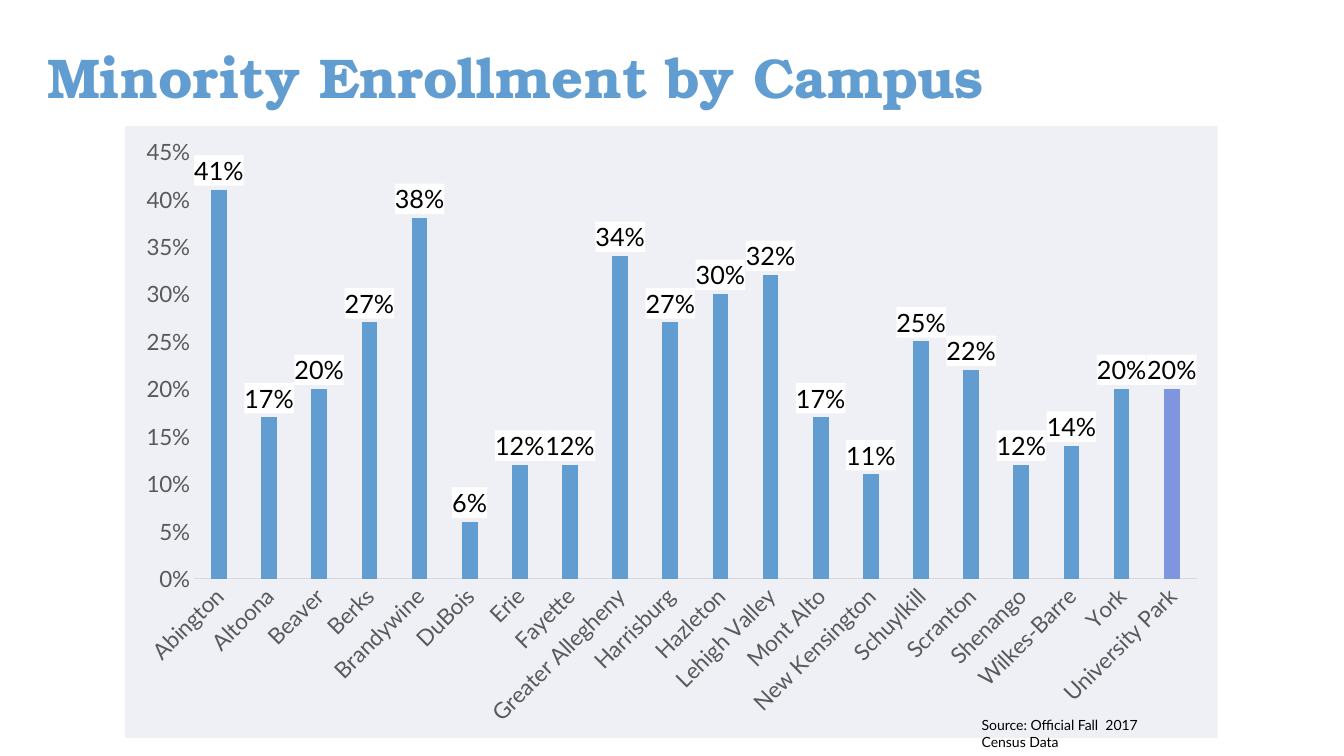
"""Build the slide showing minority enrollment by campus as a column chart."""
from lxml import etree
from pptx import Presentation
from pptx.chart.data import CategoryChartData
from pptx.dml.color import RGBColor
from pptx.enum import chart as ch, text
from pptx.oxml import parse_xml
from pptx.oxml.ns import nsdecls, qn
from pptx.util import Pt

BLUE = RGBColor(0x62, 0x9D, 0xD1)
VIOLET = RGBColor(0x7F, 0x95, 0xDE)
PALE = RGBColor(0xEE, 0xF0, 0xF6)
GRAY = RGBColor(0x59, 0x59, 0x59)
RULE = RGBColor(0xD9, 0xD9, 0xD9)
WHITE = RGBColor(0xFF, 0xFF, 0xFF)
BLACK = RGBColor(0, 0, 0)

ENROLLMENT = {
    "Abington": 0.41, "Altoona": 0.17, "Beaver": 0.2, "Berks": 0.27,
    "Brandywine": 0.38, "DuBois": 0.06, "Erie": 0.12, "Fayette": 0.12,
    "Greater Allegheny": 0.34, "Harrisburg": 0.27, "Hazleton": 0.3,
    "Lehigh Valley": 0.32, "Mont Alto": 0.17, "New Kensington": 0.11,
    "Schuylkill": 0.25, "Scranton": 0.22, "Shenango": 0.12,
    "Wilkes-Barre": 0.14, "York": 0.2, "University Park": 0.2,
}


def set_font(font, name, size, color):
    font.name, font.size = name, Pt(size)
    font.color.rgb = color


def solid_box(color):
    return parse_xml(
        f'<c:spPr {nsdecls("c", "a")}><a:solidFill><a:srgbClr val="{color}"/>'
        '</a:solidFill><a:ln><a:noFill/></a:ln></c:spPr>')


prs = Presentation()
prs.slide_width, prs.slide_height = Pt(960), Pt(540)
s = prs.slides.add_slide(prs.slide_layouts[5])

title = s.shapes.title
title.left, title.top, title.width, title.height = Pt(26.64), Pt(26.64), Pt(905.76), Pt(90)
tf = title.text_frame
tf.text = "Minority Enrollment by Campus"
tf.vertical_anchor = text.MSO_ANCHOR.TOP
tf.auto_size = text.MSO_AUTO_SIZE.NONE
p = tf.paragraphs[0]
p.alignment = text.PP_ALIGN.LEFT
p.font.bold = True
set_font(p.font, "TeX Gyre Bonum", 40, BLUE)

data = CategoryChartData(number_format="0%")
data.categories = list(ENROLLMENT)
data.add_series("Minority enrollment", list(ENROLLMENT.values()))
chart = s.shapes.add_chart(ch.XL_CHART_TYPE.COLUMN_CLUSTERED, Pt(89.28), Pt(90),
                           Pt(780.48), Pt(437.04), data).chart
chart.has_legend = False
chart.has_title = False
set_font(chart.font, "Lato", 10, BLACK)
chart_space = chart.element
chart_space.find(qn("c:chart")).addnext(solid_box(PALE))

plot_area = chart_space.find(".//" + qn("c:plotArea"))
layout = plot_area.find(qn("c:layout"))
if layout is None:
    layout = etree.Element(qn("c:layout"))
    plot_area.insert(0, layout)
manual = etree.SubElement(layout, qn("c:manualLayout"))
for tag, val in (("layoutTarget", "inner"), ("xMode", "edge"), ("yMode", "edge"),
                 ("x", "0.063"), ("y", "0.042"), ("w", "0.918"), ("h", "0.698")):
    etree.SubElement(manual, qn("c:" + tag)).set("val", val)

for axis in (chart.category_axis, chart.value_axis):
    axis.has_major_gridlines = False
    axis.major_tick_mark = axis.minor_tick_mark = ch.XL_TICK_MARK.NONE
    set_font(axis.tick_labels.font, "Lato", 16, GRAY)

campuses, share = chart.category_axis, chart.value_axis
campuses.format.line.color.rgb = RULE
campuses.format.line.width = Pt(0.75)
campuses._element.find(".//" + qn("a:bodyPr")).set("rot", "-2700000")
share.format.line.fill.background()
share.minimum_scale, share.maximum_scale, share.major_unit = 0, 0.45, 0.05
share.tick_labels.number_format = "0%"
share.tick_labels.number_format_is_linked = False

plot = chart.plots[0]
plot.gap_width, plot.overlap = 219, -27
plot.vary_by_categories = False
columns = plot.series[0]
columns.format.fill.solid()
columns.format.fill.fore_color.rgb = BLUE
university_park = columns.points[len(ENROLLMENT) - 1].format.fill
university_park.solid()
university_park.fore_color.rgb = VIOLET

labels = columns.data_labels
labels.show_value = True
labels.number_format = "0%"
labels.number_format_is_linked = False
labels.position = ch.XL_LABEL_POSITION.OUTSIDE_END
set_font(labels.font, "Lato", 18, BLACK)
labels._element.find(qn("c:numFmt")).addnext(solid_box(WHITE))

source = s.shapes.add_textbox(Pt(694.08), Pt(508.32), Pt(138.24), Pt(36))
tf = source.text_frame
tf.word_wrap = False
p = tf.paragraphs[0]
p.text = "Source: Official Fall  2017 Census Data"
set_font(p.font, "Lato", 10, BLACK)

prs.save("out.pptx")
